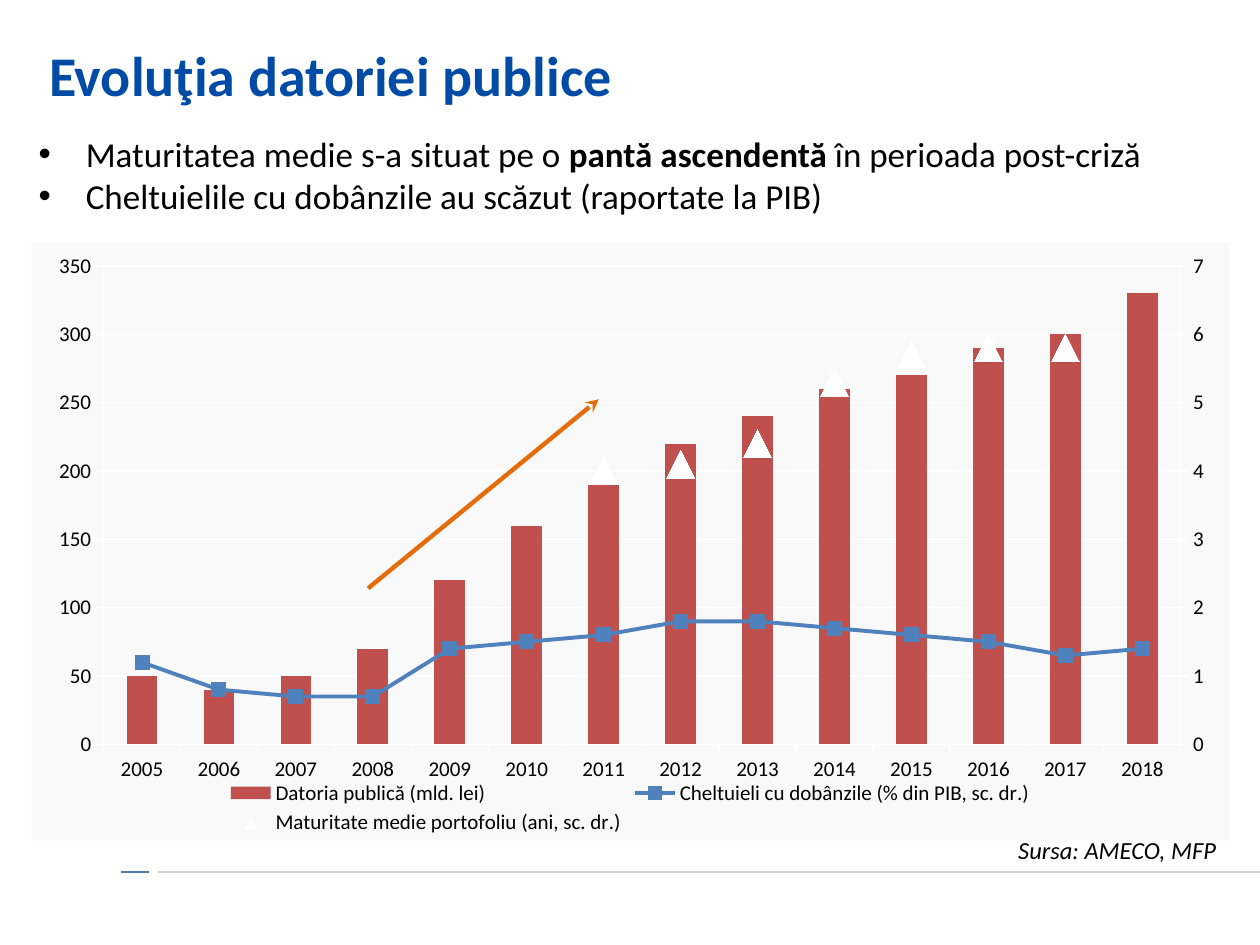
from pptx import Presentation
from pptx.chart.data import CategoryChartData
from pptx.dml.color import RGBColor
from pptx.enum.chart import XL_CHART_TYPE, XL_LEGEND_POSITION, XL_MARKER_STYLE, XL_TICK_MARK
from pptx.enum.shapes import MSO_CONNECTOR
from pptx.enum.text import MSO_ANCHOR, PP_ALIGN
from pptx.oxml import parse_xml
from pptx.oxml.ns import nsdecls, qn
from pptx.util import Cm, Pt

FONT = "Calibri"
COLORS = {
    "title": "004BA6", "text": "000000", "panel": "F9F9F9", "white": "FFFFFF",
    "debt": "C0504D", "interest": "4F81BD", "arrow": "E46C0A",
    "rule": "D0D2D3", "rule_accent": "4B7EBC",
}
YEARS = [str(year) for year in range(2005, 2019)]
DEBT = [50, 40, 50, 70, 120, 160, 190, 220, 240, 260, 270, 290, 300, 330]
INTEREST = [1.2, 0.8, 0.7, 0.7, 1.4, 1.5, 1.6, 1.8, 1.8, 1.7, 1.6, 1.5, 1.3, 1.4]
MATURITY = [None] * 6 + [4, 4.1, 4.4, 5.3, 5.7, 5.8, 5.8, None]


def rgb(name):
    return RGBColor.from_string(COLORS[name])


def add_text(tf, text, size, color="text", bold=False, italic=False,
             align=PP_ALIGN.LEFT, new=False):
    """Add a paragraph; every second part split by * is bold."""
    p = tf.add_paragraph() if new else tf.paragraphs[0]
    p.alignment = align
    for i, part in enumerate(text.split("*")):
        r = p.add_run()
        r.text = part
        r.font.name, r.font.size = FONT, Pt(size)
        r.font.bold, r.font.italic = bold or i % 2 == 1, italic
        r.font.color.rgb = rgb(color)
    return p


def add_box(slide, box, anchor=MSO_ANCHOR.TOP):
    tf = slide.shapes.add_textbox(*map(Cm, box)).text_frame
    tf.word_wrap = True
    tf.vertical_anchor = anchor
    return tf


def add_line(slide, x1, y1, x2, y2, color, width, tail=None):
    s = slide.shapes.add_connector(MSO_CONNECTOR.STRAIGHT, *map(Cm, (x1, y1, x2, y2)))
    s.line.color.rgb, s.line.width = rgb(color), Pt(width)
    if tail:
        s.line._get_or_add_ln().append(
            parse_xml(f'<a:tailEnd {nsdecls("a")} type="{tail}"/>'))
    s._element.spPr.append(parse_xml(f'<a:effectLst {nsdecls("a")}/>'))


def add_bullets(slide, box, items):
    tf = add_box(slide, box)
    for i, item in enumerate(items):
        p = add_text(tf, item, 20, align=PP_ALIGN.JUSTIFY, new=i > 0)
        pPr = p._p.get_or_add_pPr()
        pPr.set("marL", str(Cm(0.95)))
        pPr.set("indent", str(-Cm(0.95)))
        pPr.append(parse_xml(f'<a:buFont {nsdecls("a")} typeface="Arial"/>'))
        pPr.append(parse_xml(f'<a:buChar {nsdecls("a")} char="•"/>'))
    tf.paragraphs[0].line_spacing = 2.0


def move_to_right_axis(chart):
    """Turn all series but the first into lines on a second value axis."""
    area = chart._chartSpace.chart.plotArea
    line = parse_xml(
        f'<c:lineChart {nsdecls("c")}><c:grouping val="standard"/><c:varyColors val="0"/>'
        '<c:marker val="1"/><c:axId val="5001"/><c:axId val="5002"/></c:lineChart>')
    bar = area.find(qn("c:barChart"))
    for ser in bar.findall(qn("c:ser"))[1:]:
        for flag in ser.findall(qn("c:invertIfNegative")):
            ser.remove(flag)
        line.find(qn("c:marker")).addprevious(ser)
    bar.addnext(line)
    last = area.find(qn("c:valAx"))
    for tag, ax, cross, pos, hidden, crosses in (
            ("catAx", 5001, 5002, "b", 1, "autoZero"), ("valAx", 5002, 5001, "r", 0, "max")):
        limits = '<c:max val="7"/><c:min val="0"/>' if tag == "valAx" else ""
        unit = '<c:majorUnit val="1"/>' if tag == "valAx" else ""
        axis = parse_xml(
            f'<c:{tag} {nsdecls("c", "a")}><c:axId val="{ax}"/>'
            f'<c:scaling><c:orientation val="minMax"/>{limits}</c:scaling>'
            f'<c:delete val="{hidden}"/><c:axPos val="{pos}"/>'
            '<c:numFmt formatCode="General" sourceLinked="0"/>'
            '<c:majorTickMark val="out"/><c:minorTickMark val="none"/>'
            '<c:tickLblPos val="nextTo"/>'
            f'<c:spPr><a:ln w="{Pt(0.75)}"><a:solidFill><a:srgbClr val="{COLORS["white"]}"/>'
            '</a:solidFill></a:ln></c:spPr>'
            f'<c:crossAx val="{cross}"/><c:crosses val="{crosses}"/>{unit}</c:{tag}>')
        last.addnext(axis)
        last = axis


def set_backgrounds(chart, x, y, w, h):
    """Fill the chart and plot area, and fix the inner plot area."""
    fill = (f'<c:spPr {nsdecls("c", "a")}><a:solidFill><a:srgbClr val="{COLORS["panel"]}"/>'
            '</a:solidFill><a:ln><a:noFill/></a:ln></c:spPr>')
    area = chart._chartSpace.chart.plotArea
    for old in area.findall(qn("c:layout")):
        area.remove(old)
    sizes = "".join(f'<c:{k} val="{v}"/>' for k, v in zip("xywh", (x, y, w, h)))
    area.insert(0, parse_xml(
        f'<c:layout {nsdecls("c")}><c:manualLayout><c:layoutTarget val="inner"/>'
        f'<c:xMode val="edge"/><c:yMode val="edge"/>{sizes}</c:manualLayout></c:layout>'))
    area.append(parse_xml(fill))
    chart._chartSpace.chart.addnext(parse_xml(fill))


def add_debt_chart(slide, box):
    data = CategoryChartData()
    data.categories = YEARS
    data.add_series("Datoria publică (mld. lei)", DEBT)
    data.add_series("Cheltuieli cu dobânzile (% din PIB, sc. dr.)", INTEREST)
    data.add_series("Maturitate medie portofoliu (ani, sc. dr.)", MATURITY)
    chart = slide.shapes.add_chart(XL_CHART_TYPE.COLUMN_CLUSTERED, *map(Cm, box), data).chart
    chart.has_title = False
    chart.font.name, chart.font.size = FONT, Pt(12)
    chart.font.color.rgb = rgb("text")
    chart.has_legend = True
    chart.legend.position = XL_LEGEND_POSITION.BOTTOM
    chart.legend.include_in_layout = False

    # Axes
    value = chart.value_axis
    value.minimum_scale, value.maximum_scale, value.major_unit = 0, 350, 50
    value.has_major_gridlines = True
    for axis in (chart.category_axis, value):
        axis.major_tick_mark = XL_TICK_MARK.OUTSIDE
    for part in (chart.category_axis, value, value.major_gridlines):
        part.format.line.color.rgb, part.format.line.width = rgb("white"), Pt(0.75)

    # Series
    move_to_right_axis(chart)
    bars, lines = chart.plots
    bars.gap_width, bars.vary_by_categories = 150, False
    bars.series[0].format.fill.solid()
    bars.series[0].format.fill.fore_color.rgb = rgb("debt")
    interest, maturity = lines.series
    interest.format.line.color.rgb, interest.format.line.width = rgb("interest"), Pt(2.25)
    maturity.format.line.fill.background()
    for ser, style, size, color in ((interest, XL_MARKER_STYLE.SQUARE, 8, "interest"),
                                    (maturity, XL_MARKER_STYLE.TRIANGLE, 16, "white")):
        ser.smooth = False
        ser.marker.style, ser.marker.size = style, size
        ser.marker.format.fill.solid()
        ser.marker.format.fill.fore_color.rgb = rgb(color)
        ser.marker.format.line.fill.background()
    set_backgrounds(chart, 0.06, 0.04, 0.9, 0.8)

    # Trend arrow, relative to the chart
    x, y = box[:2]
    add_line(slide, x + 6.78, y + 6.98, x + 11.43, y + 3.17, "arrow", 2.5, tail="stealth")


def add_footer_rule(slide, y):
    add_line(slide, 25.4, y, 3.18, y, "rule", 0.75)
    add_line(slide, 3, y, 2.44, y, "rule_accent", 0.75)


def main():
    prs = Presentation()
    prs.slide_width, prs.slide_height = Cm(25.4), Cm(19.05)
    slide = prs.slides.add_slide(prs.slide_layouts[6])
    add_footer_rule(slide, 17.58)
    add_debt_chart(slide, (0.64, 4.88, 24.13, 12.06))
    # Source, title and key messages
    add_text(add_box(slide, (18.62, 16.71, 6.15, 0.86)), "Sursa: AMECO, MFP", 14,
             italic=True, align=PP_ALIGN.RIGHT)
    add_text(add_box(slide, (0.74, 0.43, 24.13, 2.11), MSO_ANCHOR.MIDDLE),
             "Evoluţia datoriei publice", 32, color="title", bold=True)
    add_bullets(slide, (0.53, 1.7, 23.8, 2.82), [
        "Maturitatea medie s-a situat pe o *pantă ascendentă* în perioada post-criză",
        "Cheltuielile cu dobânzile au scăzut (raportate la PIB)"])
    prs.save("out.pptx")


if __name__ == "__main__":
    main()
